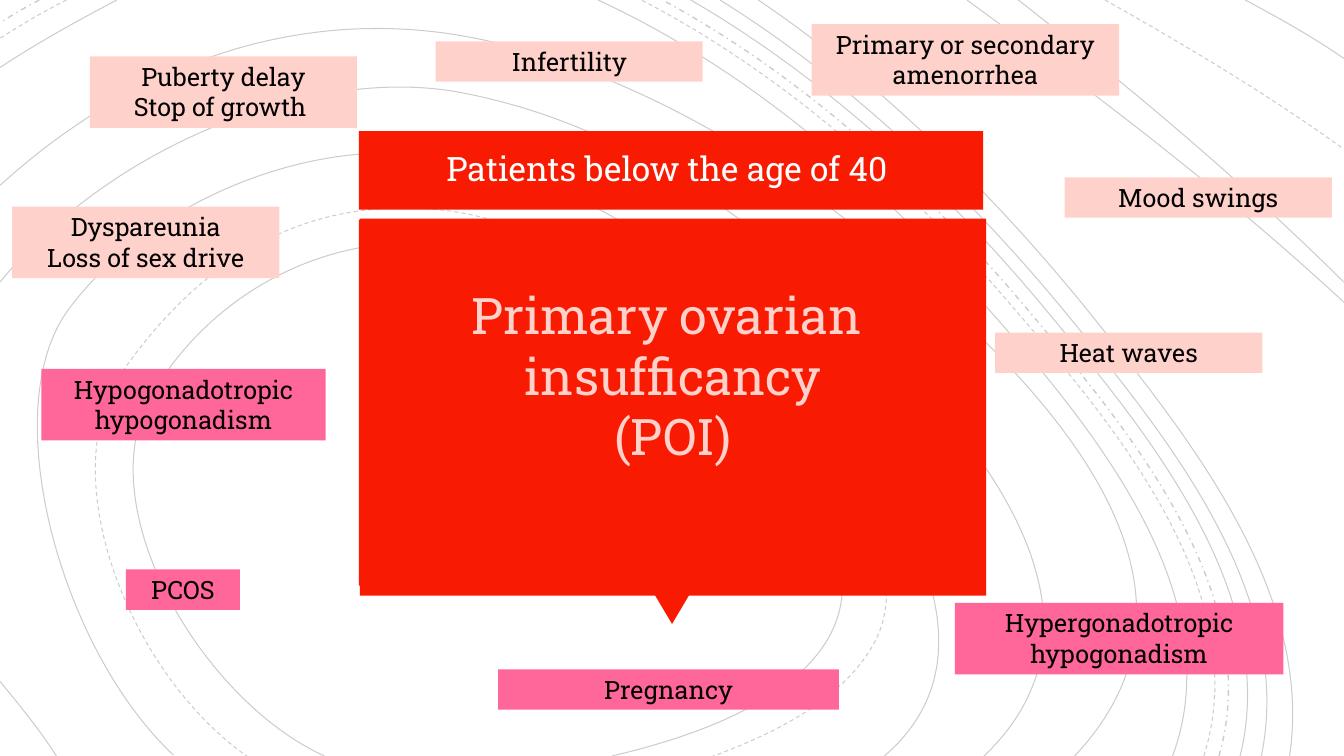
from lxml.etree import SubElement
from pptx import Presentation
from pptx.dml.color import RGBColor
from pptx.enum.dml import MSO_LINE
from pptx.enum.shapes import MSO_SHAPE
from pptx.enum.text import MSO_ANCHOR, MSO_AUTO_SIZE, PP_ALIGN
from pptx.oxml.ns import qn
from pptx.util import Pt

PX = 9144  # 100 px to the inch
WIDTH, HEIGHT = 1333, 750
FONT = "Roboto Slab"
RED = RGBColor(0xF8, 0x1B, 0x02)
PALE = RGBColor(0xFF, 0xD1, 0xCB)
PINK = RGBColor(0xFF, 0x66, 0x99)
BLACK = RGBColor(0, 0, 0)
WHITE = RGBColor(0xFF, 0xFF, 0xFF)
SOLID, DASH, DASH_DOT = MSO_LINE.SOLID, MSO_LINE.DASH, MSO_LINE.DASH_DOT

# Start, first handle, then a handle and an anchor for each segment
LOOPS = [
    (SOLID, [(876, 751), (1025, 625), (835, 409), (738, 315), (536, 164), (412, 153),
             (141, 208), (68, 307), (60, 644), (172, 749)]),
    (SOLID, [(607, 750), (710, 726), (880, 667), (825, 529), (615, 278), (480, 248),
             (216, 281), (151, 391), (200, 695), (322, 750)]),
    (DASH, [(705, 751), (765, 729), (835, 696), (867, 638), (864, 495), (817, 440),
            (592, 227), (443, 209), (193, 267), (122, 368), (127, 668), (246, 751)]),
    (SOLID, [(975, 751), (1130, 604), (950, 413), (838, 306), (603, 120), (458, 92),
             (111, 143), (0, 280)]),
    (SOLID, [(1065, 751), (1213, 595), (1067, 422), (944, 307), (667, 87), (498, 44),
             (152, 46), (0, 184)]),
]

# The right-hand bundle runs from its inner to its outer edge
INNER = [(1163, 750), (1226, 581), (1064, 401), (963, 287), (736, 66), (593, 0)]
OUTER = [(1279, 750), (1303, 590), (1182, 438), (1090, 322), (881, 87), (752, 0)]
BUNDLE = [(0, SOLID), (0.27, DASH), (0.4, DASH_DOT), (0.58, SOLID), (0.76, SOLID), (1, SOLID)]

# Nearly straight lines across the corners
ARCS = [
    (SOLID, (0, 676), (56, HEIGHT)),
    (SOLID, (116, 0), (0, 67)),
    (DASH, (66, 0), (0, 38)),
    (DASH_DOT, (39, 0), (0, 23)),
    (SOLID, (959, 0), (WIDTH, 300)),
    (SOLID, (1010, 0), (WIDTH, 280)),
    (DASH, (1096, 0), (WIDTH, 148)),
    (SOLID, (1235, 0), (WIDTH, 58)),
]

# Left, top, width, paragraphs
LABELS = {
    PALE: [
        (987, 330, 265, ["Heat waves"]),
        (12, 205, 265, ["Dyspareunia", "Loss of sex drive"]),
        (432, 41, 265, ["Infertility"]),
        (805, 24, 305, ["Primary or secondary amenorrhea"]),
        (1056, 176, 265, ["Mood swings"]),
        (89, 56, 265, ["Puberty delay", "Stop of growth "]),
    ],
    PINK: [
        (494, 664, 338, ["Pregnancy"]),
        (41, 366, 282, ["Hypogonadotropic", "hypogonadism"]),
        (947, 598, 326, ["Hypergonadotropic hypogonadism"]),
        (125, 565, 113, ["PCOS"]),
    ],
}


def emu(box):
    return [v * PX for v in box]


def between(a, b, t):
    return tuple(round(m + (n - m) * t) for m, n in zip(a, b))


def smooth(points):
    """Add each later segment's first handle by mirroring the one before it."""
    full = list(points[:4])
    for i in range(4, len(points), 2):
        full += [between(full[-2], full[-1], 2), *points[i:i + 2]]
    return full


def arc(start, end):
    """Place two handles at thirds, lifted a little above the chord."""
    (x0, y0), (x1, y1) = start, end
    handles = [(round(x0 + (x1 - x0) * u), round(y0 + (y1 - y0) * v))
               for u, v in ((0.33, 0.3), (0.67, 0.62))]
    return [start, *handles, end]


def write(s, lines, size, color, **frame):
    """Fill a shape with centred paragraphs; frame holds text frame settings."""
    tf = s.text_frame
    settings = {"word_wrap": True, "auto_size": MSO_AUTO_SIZE.NONE,
                "vertical_anchor": MSO_ANCHOR.TOP,
                "margin_left": 10 * PX, "margin_right": 10 * PX,
                "margin_top": 5 * PX, "margin_bottom": 5 * PX}
    for name, value in {**settings, **frame}.items():
        setattr(tf, name, value)
    for i, line in enumerate(lines):
        p = tf.add_paragraph() if i else tf.paragraphs[0]
        p.alignment = PP_ALIGN.CENTER
        r = p.add_run()
        r.text = line
        for name, value in {"name": FONT, "size": Pt(size)}.items():
            setattr(r.font, name, value)
        r.font.color.rgb = color


def add_block(shapes, kind, box, fill):
    s = shapes.add_shape(kind, *emu(box))
    s.shadow.inherit = False
    s.fill.solid()
    s.fill.fore_color.rgb = fill
    s.line.fill.background()
    return s


def add_contour(shapes, dash, points):
    """Draw an open Bezier outline in translucent black."""
    builder = shapes.build_freeform(*points[0], scale=PX)
    builder.add_line_segments(points[1:], close=False)
    s = builder.convert_to_shape()
    s.shadow.inherit = False
    s.fill.background()
    s.line.color.rgb = BLACK
    s.line.width = Pt(1 if dash == DASH_DOT else 0.75)
    s.line.dash_style = dash
    color = next(s.element.iter(qn("a:srgbClr")))
    SubElement(color, qn("a:alpha"), val="20000")
    outline = next(s.element.iter(qn("a:path")))
    steps = outline.findall(qn("a:lnTo"))
    for i in range(0, len(steps), 3):
        curve = SubElement(outline, qn("a:cubicBezTo"))
        for step in steps[i:i + 3]:
            curve.append(step[0])
            outline.remove(step)


def add_contours(shapes):
    for dash, points in LOOPS:
        add_contour(shapes, dash, smooth(points))
    for t, dash in BUNDLE:
        points = [between(a, b, t) for a, b in zip(INNER, OUTER)]
        add_contour(shapes, dash, smooth(points))
    for dash, start, end in ARCS:
        add_contour(shapes, dash, arc(start, end))


def add_label(shapes, left, top, width, lines, fill):
    height = 40 if len("".join(lines)) < 20 else 71
    s = add_block(shapes, MSO_SHAPE.RECTANGLE, (left, top, width, height), fill)
    write(s, lines, 18, BLACK)


def add_title(slide, box, lines):
    """Format the title placeholder as the red centre box, in front of the rest."""
    s = slide.shapes.title
    s.left, s.top, s.width, s.height = emu(box)
    s.fill.solid()
    s.fill.fore_color.rgb = RED
    write(s, lines, 36, PALE, margin_top=65 * PX)
    s.element.getparent().append(s.element)


def main():
    prs = Presentation()
    prs.slide_width, prs.slide_height = emu((WIDTH, HEIGHT))
    slide = prs.slides.add_slide(prs.slide_layouts[5])
    shapes = slide.shapes

    add_contours(shapes.add_group_shape().shapes)
    add_block(shapes, MSO_SHAPE.RECTANGLE, (356, 130, 619, 78), RED)
    pointer = add_block(shapes, MSO_SHAPE.ISOSCELES_TRIANGLE, (644, 581, 45, 38), RED)
    pointer.rotation = 180
    add_block(shapes, MSO_SHAPE.RECTANGLE, (356, 218, 620, 363), RED)

    caption = shapes.add_textbox(*emu((385, 142, 553, 50)))
    write(caption, ["Patients below the age of 40"], 24, WHITE)
    for fill, labels in LABELS.items():
        for label in labels:
            add_label(shapes, *label, fill)
    add_title(slide, (357, 217, 621, 374), ["Primary ovarian ", "insufficancy", "(POI)"])

    prs.save("out.pptx")


if __name__ == "__main__":
    main()
